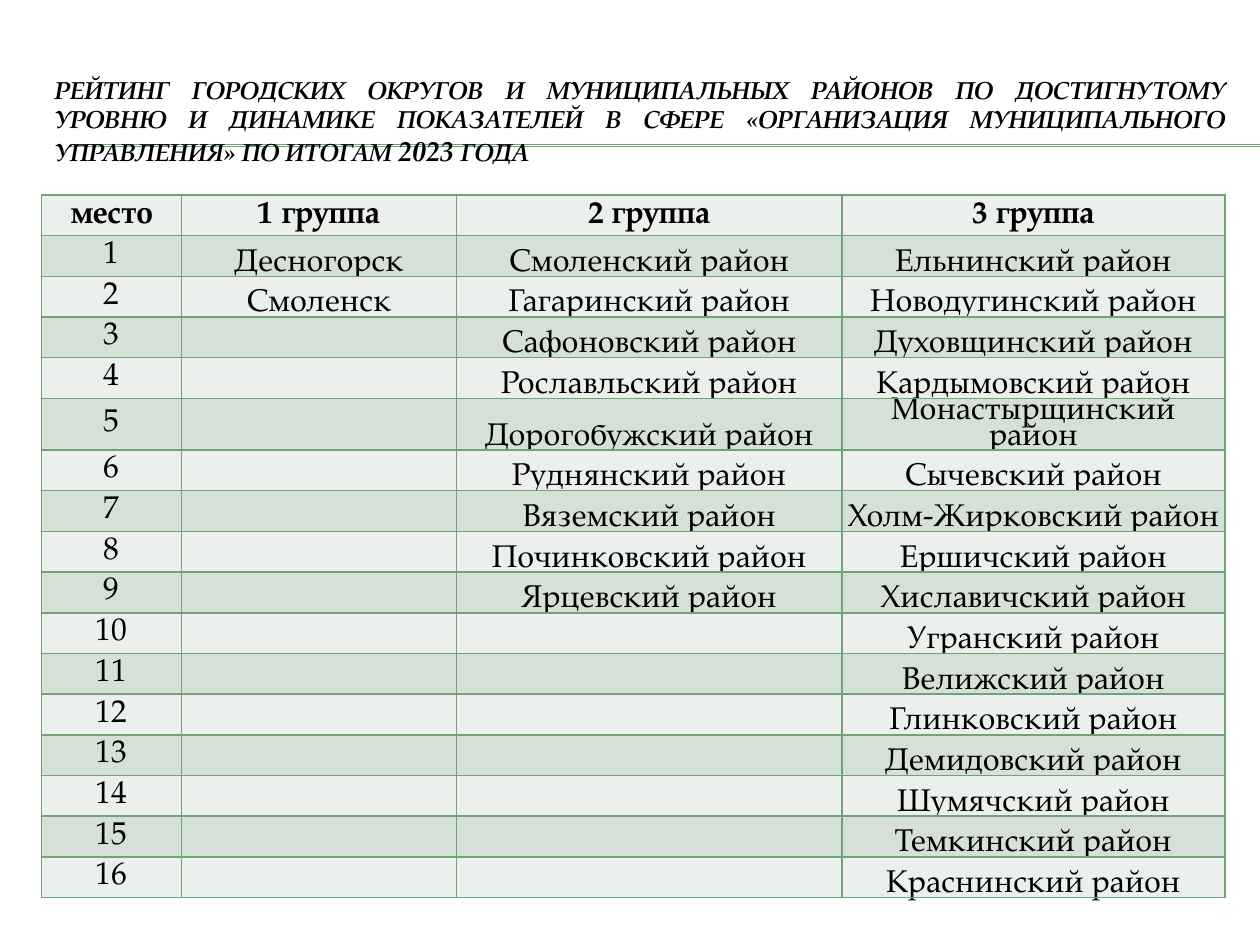
"""Build the slide that ranks municipal districts by group for 2023."""
import dataclasses
import itertools

import lxml.etree
import pptx
import pptx.dml.color
import pptx.enum.shapes
import pptx.enum.text
import pptx.oxml.ns
import pptx.util
from pptx.util import Cm, Pt


@dataclasses.dataclass(frozen=True)
class Theme:
    font: str = "TeX Gyre Pagella"
    text: str = "000000"
    line: str = "72A376"
    light_row: str = "EBF0EC"
    dark_row: str = "D5E0D6"
    title_size: int = 14
    year_size: int = 16
    table_size: int = 18


theme = Theme()
color = pptx.dml.color.RGBColor.from_string
align = pptx.enum.text.PP_ALIGN
anchor = pptx.enum.text.MSO_ANCHOR
qn = pptx.oxml.ns.qn


def format_run(run, size, bold=False, italic=False):
    run.font.name = theme.font
    run.font.size = Pt(size)
    run.font.bold = bold
    run.font.italic = italic
    run.font.color.rgb = color(theme.text)


def style_cell(cell, fill):
    cell.margin_left = cell.margin_right = cell.margin_top = Cm(0.02)
    cell.margin_bottom = 0
    properties = cell._tc.get_or_add_tcPr()
    for side in ("lnL", "lnR", "lnT", "lnB"):
        border = lxml.etree.SubElement(properties, qn(f"a:{side}"), w=str(Pt(1)))
        solid = lxml.etree.SubElement(border, qn("a:solidFill"))
        lxml.etree.SubElement(solid, qn("a:srgbClr"), val=theme.line)
    cell.fill.solid()
    cell.fill.fore_color.rgb = color(fill)


presentation = pptx.Presentation()
presentation.slide_width = Cm(25.4)
presentation.slide_height = Cm(19.05)
slide = presentation.slides.add_slide(presentation.slide_layouts[5])

title = slide.shapes.title
title.left, title.top, title.width, title.height = Cm(0.84), Cm(1.27), Cm(24.13), Cm(2.34)
title_frame = title.text_frame
title_frame.word_wrap = True
title_frame.auto_size = pptx.enum.text.MSO_AUTO_SIZE.NONE
title_frame.vertical_anchor = anchor.MIDDLE
title_paragraph = title_frame.paragraphs[0]
title_paragraph.alignment = align.JUSTIFY
title_parts = [
    ("РЕЙТИНГ ГОРОДСКИХ ОКРУГОВ И МУНИЦИПАЛЬНЫХ РАЙОНОВ ПО ДОСТИГНУТОМУ УРОВНЮ "
     "И ДИНАМИКЕ ПОКАЗАТЕЛЕЙ В СФЕРЕ «ОРГАНИЗАЦИЯ МУНИЦИПАЛЬНОГО УПРАВЛЕНИЯ» ПО ИТОГАМ ",
     theme.title_size),
    ("2023", theme.year_size),
    (" ГОДА", theme.title_size),
]
for text, size in title_parts:
    run = title_paragraph.add_run()
    run.text = text
    format_run(run, size, bold=True, italic=True)

for rule_top in (Cm(2.92), Cm(2.95)):
    rule = slide.shapes.add_connector(
        pptx.enum.shapes.MSO_CONNECTOR.STRAIGHT, Cm(1.42), rule_top, Cm(25.4), rule_top)
    rule.line.color.rgb = color(theme.line)
    rule.line.width = Pt(0.75)
    lxml.etree.SubElement(rule._element.spPr, qn("a:effectLst"))
    title._element.addprevious(rule._element)

headings = ["место", "1 группа", "2 группа", "3 группа"]
cities = ["Десногорск", "Смоленск"]
second_group = ["Смоленский", "Гагаринский", "Сафоновский", "Рославльский", "Дорогобужский",
                "Руднянский", "Вяземский", "Починковский", "Ярцевский"]
third_group = ["Ельнинский", "Новодугинский", "Духовщинский", "Кардымовский",
               "Монастырщинский", "Сычевский", "Холм-Жирковский", "Ершичский",
               "Хиславичский", "Угранский", "Велижский", "Глинковский", "Демидовский",
               "Шумячский", "Темкинский", "Краснинский"]
districts = [[f"{name} район" for name in group] for group in (second_group, third_group)]
places = [str(place) for place in range(1, len(third_group) + 1)]
rows = [headings, *itertools.zip_longest(places, cities, *districts, fillvalue="")]

column_widths = [Cm(2.82), Cm(5.54), Cm(7.77), Cm(7.72)]
row_height = Cm(0.82)
table = slide.shapes.add_table(
    len(rows), len(headings), Cm(0.84), Cm(3.93),
    sum(column_widths), row_height * len(rows)).table
for column, width in zip(table.columns, column_widths):
    column.width = width

for row_index, values in enumerate(rows):
    table.rows[row_index].height = row_height
    fill = theme.dark_row if row_index % 2 else theme.light_row
    for column_index, value in enumerate(values):
        cell = table.cell(row_index, column_index)
        style_cell(cell, fill)
        is_name = row_index > 0 and column_index > 0
        cell.vertical_anchor = anchor.BOTTOM if is_name else anchor.MIDDLE
        if value:
            paragraph = cell.text_frame.paragraphs[0]
            paragraph.text = value
            paragraph.alignment = align.CENTER
            paragraph.line_spacing = 0.8 if is_name else 1.0
            format_run(paragraph.runs[0], theme.table_size, bold=row_index == 0)

presentation.save("out.pptx")
